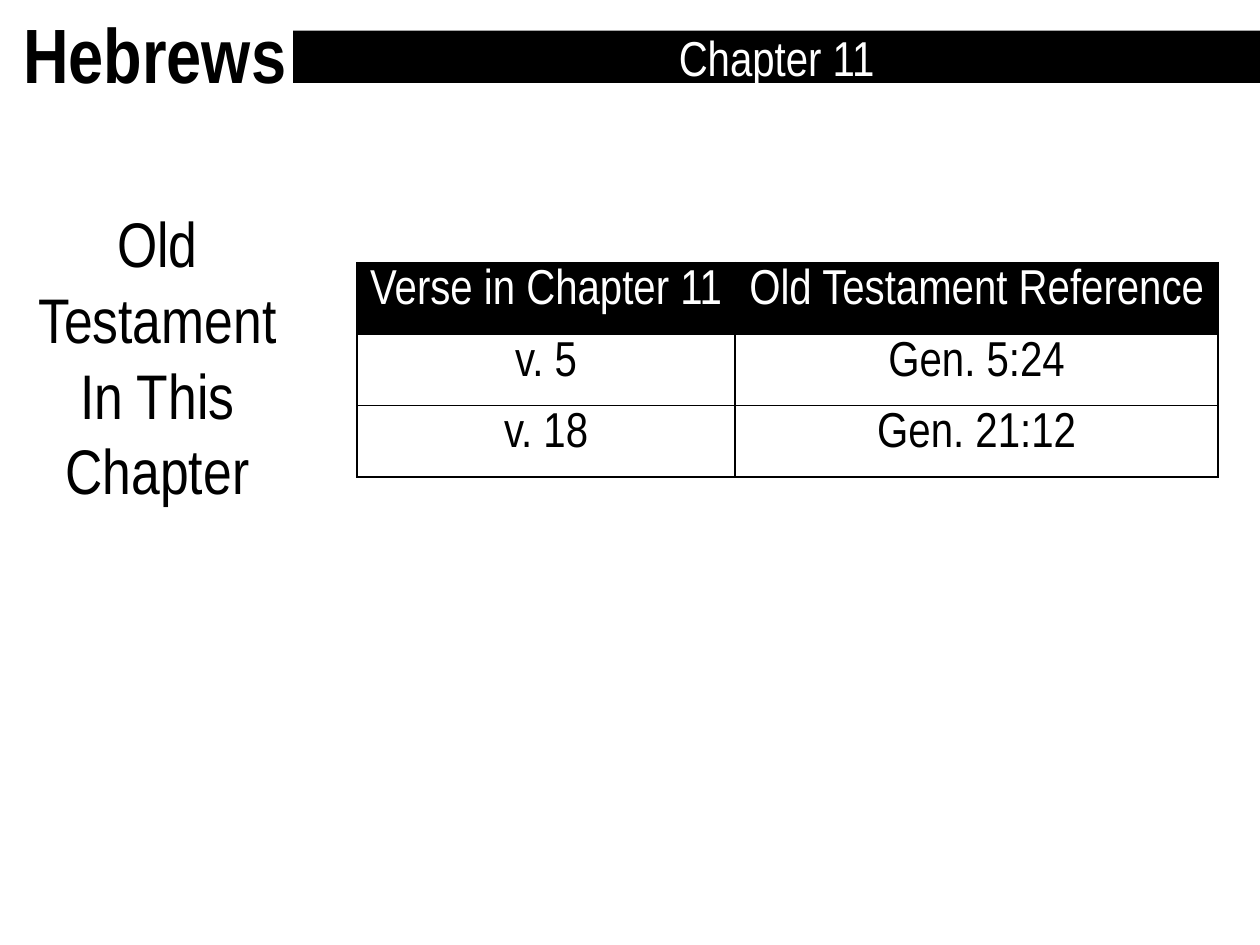
"""Build the Hebrews chapter 11 slide with its Old Testament references."""
from pptx import Presentation
from pptx.dml.color import RGBColor
from pptx.enum.shapes import MSO_SHAPE
from pptx.enum.text import MSO_ANCHOR, MSO_AUTO_SIZE, PP_ALIGN
from pptx.oxml import parse_xml
from pptx.oxml.ns import nsdecls
from pptx.util import Pt

BOOK = "Hebrews"
CHAPTER = "Chapter 11"
LABEL = ["Old", "Testament", "In This", "Chapter"]
VERSES = [
    ("Verse in Chapter 11", "Old Testament Reference"),
    ("v. 5", "Gen. 5:24"),
    ("v. 18", "Gen. 21:12"),
]
THEME = {
    "font": "Arial Narrow",
    "ink": RGBColor(0, 0, 0),
    "paper": RGBColor(255, 255, 255),
    "book": Pt(44),
    "label": Pt(36),
    "text": Pt(28),
    "rule": Pt(1),
}
PLACES = {
    "book": (6, 0, 714.5, 60.5),
    "bar": (167.5, 17.5, 552.5, 30),
    "label": (0, 113.5, 180, 181.5),
    "table": (204, 150, 492, 122.4),
}
WIDTHS = (216, 276)


def place(name):
    return [Pt(value) for value in PLACES[name]]


def write(frame, lines, size, color, align=PP_ALIGN.CENTER, bold=False):
    frame.text = "\n".join(lines)
    style = {"name": THEME["font"], "size": THEME[size], "bold": bold}
    for para in frame.paragraphs:
        para.alignment = align
        for key, value in style.items():
            setattr(para.font, key, value)
        para.font.color.rgb = THEME[color]


def setup(frame, **format):
    for key, value in format.items():
        setattr(frame, key, value)


def paint(fill, color):
    fill.solid()
    fill.fore_color.rgb = THEME[color]


def border(cell):
    props = cell._tc.get_or_add_tcPr()
    for spot, side in enumerate(("lnL", "lnR", "lnT", "lnB")):
        props.insert(spot, parse_xml(
            f'<a:{side} {nsdecls("a")} w="{THEME["rule"]}"><a:solidFill>'
            f'<a:srgbClr val="{THEME["ink"]}"/></a:solidFill></a:{side}>'))


def add_book(slide):
    title = slide.shapes.title
    title.left, title.top, title.width, title.height = place("book")
    write(title.text_frame, [BOOK], "book", "ink", PP_ALIGN.LEFT, True)
    setup(title.text_frame, word_wrap=True, auto_size=MSO_AUTO_SIZE.NONE,
          vertical_anchor=MSO_ANCHOR.TOP)


def add_bar(slide):
    bar = slide.shapes.add_shape(MSO_SHAPE.RECTANGLE, *place("bar"))
    bar.shadow.inherit = False
    paint(bar.fill, "ink")
    bar.line.fill.background()
    write(bar.text_frame, [CHAPTER], "text", "paper")
    setup(bar.text_frame, vertical_anchor=MSO_ANCHOR.MIDDLE)


def add_label(slide):
    frame = slide.shapes.add_textbox(*place("label")).text_frame
    write(frame, LABEL, "label", "ink")
    setup(frame, word_wrap=True, auto_size=MSO_AUTO_SIZE.SHAPE_TO_FIT_TEXT)


def add_verses(slide):
    shape = slide.shapes.add_table(len(VERSES), len(WIDTHS), *place("table"))
    table = shape.table
    for column, width in zip(table.columns, WIDTHS):
        column.width = Pt(width)
    for r, row in enumerate(VERSES):
        back, front = ("paper", "ink") if r else ("ink", "paper")
        for c, words in enumerate(row):
            cell = table.cell(r, c)
            write(cell.text_frame, [words], "text", front)
            paint(cell.fill, back)
            border(cell)


def main():
    deck = Presentation()
    deck.slide_width, deck.slide_height = Pt(720), Pt(540)
    slide = deck.slides.add_slide(deck.slide_layouts[5])
    for add in (add_label, add_verses, add_book, add_bar):
        add(slide)
    deck.save("out.pptx")


if __name__ == "__main__":
    main()
